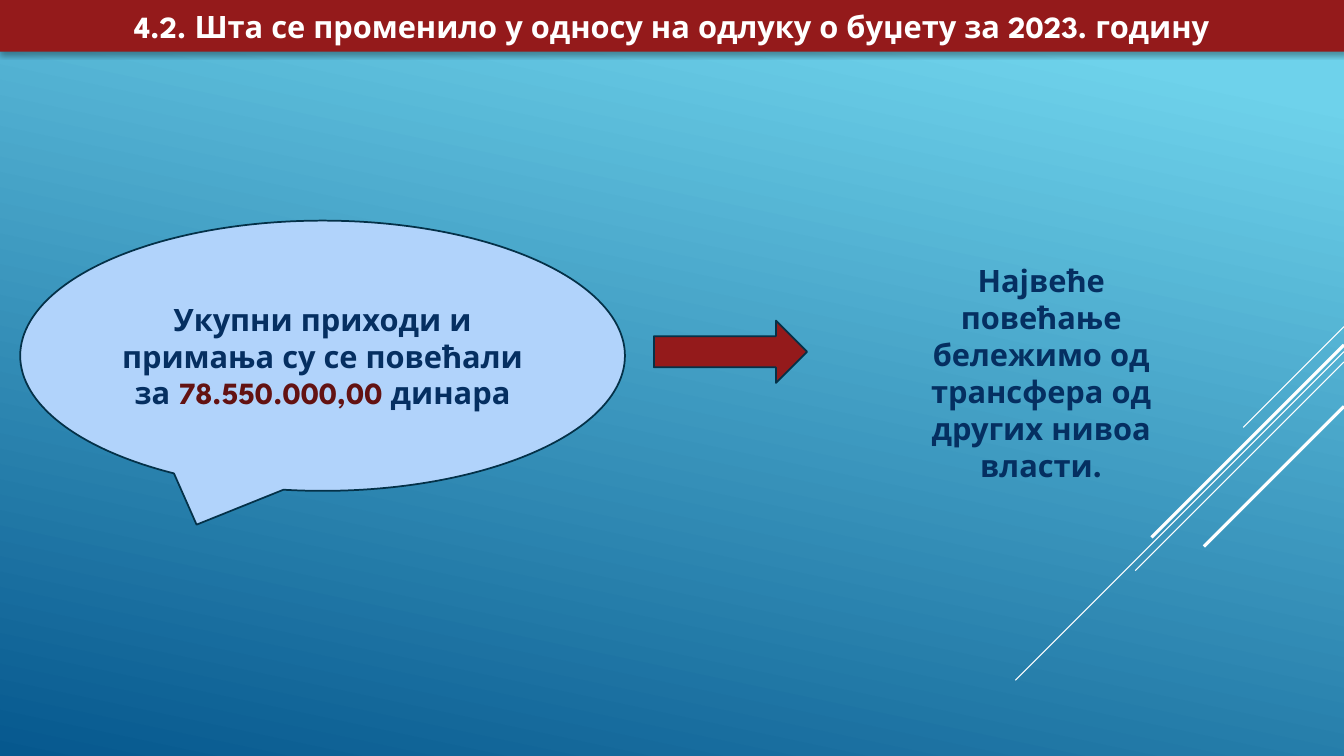
from lxml import etree
from pptx import Presentation
from pptx.dml.color import RGBColor
from pptx.enum import shapes, text
from pptx.oxml import ns
from pptx.util import Cm, Pt

WHITE = RGBColor(0xFF, 0xFF, 0xFF)
SKY = RGBColor(0x6E, 0xD2, 0xEB)
OCEAN = RGBColor(0x06, 0x58, 0x8E)
RED = RGBColor(0x94, 0x1A, 0x1B)
MAROON = RGBColor(0x63, 0x12, 0x12)
NAVY = RGBColor(0x05, 0x2F, 0x61)
OUTLINE = RGBColor(0x04, 0x31, 0x48)
PALE_BLUE = RGBColor(0xB1, 0xD3, 0xFB)

WIDTH, HEIGHT = 33.87, 19.05

# Height on the right edge, horizontal reach (cm) and weight (pt) of each diagonal
DIAGONALS = [
    (8.23, 2.54, 0.75),
    (8.86, 8.28, 0.75),
    (9.12, 5.26, 0.75),
    (8.69, 4.85, 2.25),
    (10.24, 3.53, 2.25),
]


def add_child(parent, tag, **attributes):
    return etree.SubElement(parent, ns.qn(tag), attributes)


def write(frame, *parts, font="League Spartan", size=22, bold=True):
    """Fill a frame with one centred paragraph of (wording, colour) parts."""
    frame.word_wrap = True
    frame.auto_size = text.MSO_AUTO_SIZE.NONE
    frame.vertical_anchor = text.MSO_ANCHOR.MIDDLE
    paragraph = frame.paragraphs[0]
    paragraph.alignment = text.PP_ALIGN.CENTER
    for wording, colour in parts:
        run = paragraph.add_run()
        run.text = wording
        run.font.name = font
        run.font.size = Pt(size)
        run.font.bold = bold
        run.font.color.rgb = colour


class BudgetSlide:
    """The current slide and the style of its elements."""

    def __init__(self, deck):
        self.slide = deck.slides.add_slide(deck.slide_layouts[5])

    def background(self, start, end, angle):
        fill = self.slide.background.fill
        fill.gradient()
        fill.gradient_angle = 360 - angle
        for stop, colour, position in zip(fill.gradient_stops, (start, end), (0.1, 1)):
            stop.color.rgb = colour
            stop.position = position

    def diagonal(self, edge, reach, weight):
        line = self.slide.shapes.add_connector(
            shapes.MSO_CONNECTOR.STRAIGHT,
            Cm(WIDTH), Cm(edge), Cm(WIDTH - reach), Cm(edge + reach))
        line.line.color.rgb = WHITE
        line.line.width = Pt(weight)
        add_child(line._element.spPr, "a:effectLst")

    def title(self, wording, height):
        """Turn the title into a rounded bar with a soft shadow."""
        bar = self.slide.shapes.title
        bar.left, bar.top, bar.width, bar.height = 0, 0, Cm(WIDTH), Cm(height)
        properties = bar._element.spPr
        add_child(properties, "a:prstGeom", prst="roundRect")
        bar.fill.solid()
        bar.fill.fore_color.rgb = RED
        effects = add_child(properties, "a:effectLst")
        shadow = add_child(effects, "a:outerShdw", blurRad=str(Pt(3.5)),
                           dist=str(Pt(2.2)), dir="5400000", rotWithShape="0")
        black = add_child(shadow, "a:srgbClr", val="000000")
        add_child(black, "a:alpha", val="32000")
        write(bar.text_frame, (wording, WHITE))

    def shape(self, kind, left, top, width, height, *parts, fill=None):
        """Add an outlined shape, or an invisible one when it has no fill."""
        shape = self.slide.shapes.add_shape(
            kind, Cm(left), Cm(top), Cm(width), Cm(height))
        shape.shadow.inherit = False
        if fill is None:
            shape.fill.background()
            shape.line.fill.background()
        else:
            shape.fill.solid()
            shape.fill.fore_color.rgb = fill
            shape.line.color.rgb = OUTLINE
            shape.line.width = Pt(1.25)
        if parts:
            write(shape.text_frame, *parts)


def main():
    deck = Presentation()
    deck.slide_width, deck.slide_height = Cm(WIDTH), Cm(HEIGHT)
    budget = BudgetSlide(deck)
    budget.background(SKY, OCEAN, angle=102)
    for diagonal in DIAGONALS:
        budget.diagonal(*diagonal)
    budget.title("4.2. Шта се променило у односу на одлуку о буџету за 2023. годину", 1.3)

    kinds = shapes.MSO_SHAPE
    budget.shape(kinds.OVAL_CALLOUT, 0.51, 5.56, 15.24, 6.81,
                 ("Укупни приходи и примања су се повећали за ", NAVY),
                 ("78.550.000,00 ", MAROON),
                 ("динара", NAVY), fill=PALE_BLUE)
    budget.shape(kinds.RIGHT_ARROW, 16.48, 8.08, 3.86, 1.57, fill=RED)
    budget.shape(kinds.TEAR, 21.11, 5.31, 10.26, 8.15,
                 ("Највеће повећање бележимо од трансфера од других нивоа власти.", NAVY))
    deck.save("out.pptx")


if __name__ == "__main__":
    main()
